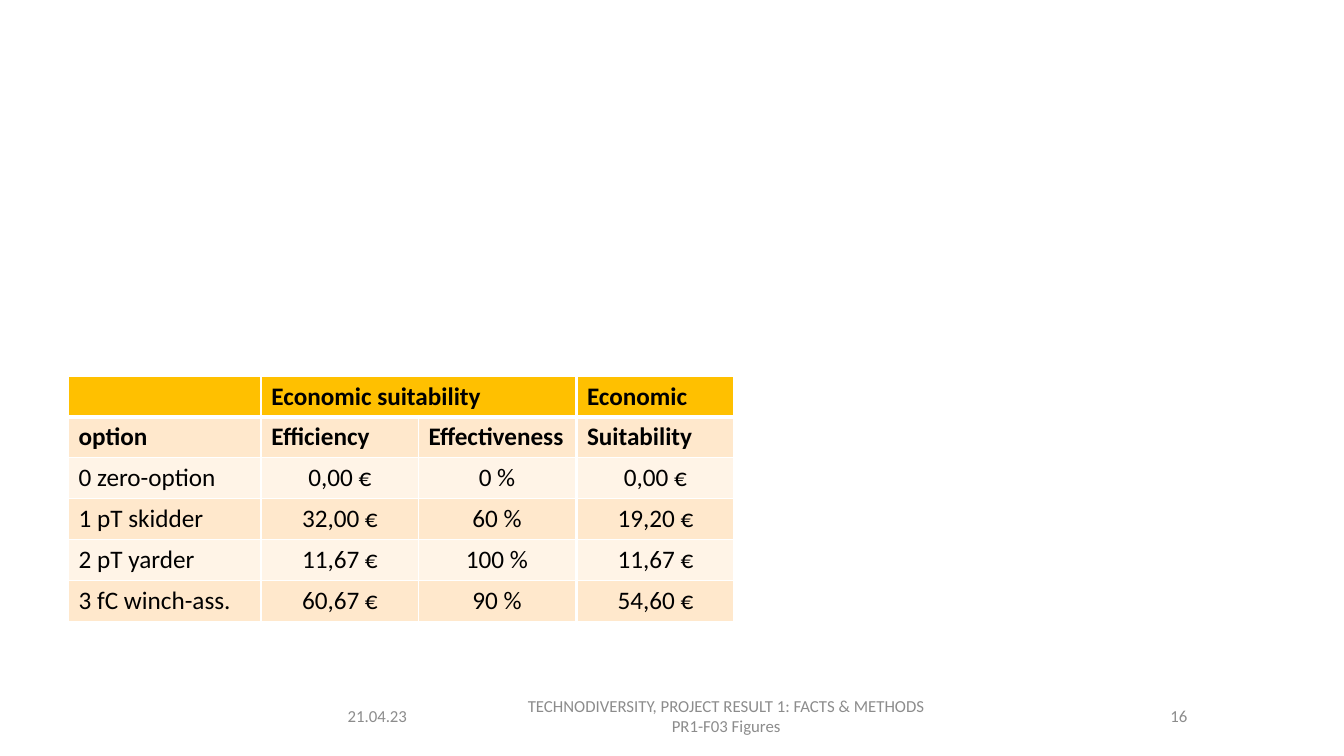
from lxml import etree
from pptx import Presentation
from pptx.dml.color import RGBColor
from pptx.enum.text import MSO_ANCHOR, PP_ALIGN
from pptx.oxml.ns import qn
from pptx.util import Pt

LEFT, CENTER, RIGHT = PP_ALIGN.LEFT, PP_ALIGN.CENTER, PP_ALIGN.RIGHT
MIDDLE = MSO_ANCHOR.MIDDLE
HEADER, DARK_BAND, LIGHT_BAND = "FFC000", "FFE8CC", "FFF4E7"
TABLE_TOP, ROW_HEIGHT = 268.56, 29.2
FOOTER_TOP, FOOTER_HEIGHT = 496.8, 28.8


def write(frame, text, size=18, color="000000", bold=False, align=LEFT):
    for index, line in enumerate(text.split("\n")):
        para = frame.add_paragraph() if index else frame.paragraphs[0]
        para.alignment = align
        span = para.add_run()
        span.text = line
        span.font.name = "Calibri"
        span.font.size = Pt(size)
        span.font.bold = bold
        span.font.color.rgb = RGBColor.from_string(color)


def style_cell(cell, color, bottom_width):
    properties = cell._tc.get_or_add_tcPr()
    for side, width in (("lnL", 1), ("lnR", 1), ("lnT", 1), ("lnB", bottom_width)):
        border = etree.SubElement(properties, qn("a:" + side), w=str(Pt(width)))
        fill = etree.SubElement(border, qn("a:solidFill"))
        etree.SubElement(fill, qn("a:srgbClr"), val="FFFFFF")
    cell.fill.solid()
    cell.fill.fore_color.rgb = RGBColor.from_string(color)


deck = Presentation()
deck.slide_width, deck.slide_height = Pt(960), Pt(540)
page = deck.slides.add_slide(deck.slide_layouts[6])

footers = [
    (241.2, 96.5, "21.04.23", LEFT),
    (349.9, 337.7, "TECHNODIVERSITY, PROJECT RESULT 1: FACTS & METHODS\nPR1-F03 Figures", CENTER),
    (703.4, 151.9, "16", RIGHT),
]
for left, width, text, align in footers:
    box = page.shapes.add_textbox(Pt(left), Pt(FOOTER_TOP), Pt(width), Pt(FOOTER_HEIGHT))
    box.text_frame.word_wrap = True
    box.text_frame.vertical_anchor = MIDDLE
    write(box.text_frame, text, size=12, color="8C8C8C", align=align)

suitability_rows = [
    ["Economic suitability", ""],
    ["Efficiency", "Effectiveness"],
    ["0,00 €", "0 %"],
    ["32,00 €", "60 %"],
    ["11,67 €", "100 %"],
    ["60,67 €", "90 %"],
]
result_rows = [["Economic"], ["Suitability"], ["0,00 €"], ["19,20 €"], ["11,67 €"], ["54,60 €"]]
option_rows = [[""], ["option"], ["0 zero-option"], ["1 pT skidder"], ["2 pT yarder"], ["3 fC winch-ass."]]

tables = [
    (186.7, 112.2, suitability_rows, CENTER),
    (412.1, 112.2, result_rows, CENTER),
    (49, 136.8, option_rows, LEFT),
]
for left, column_width, rows, value_align in tables:
    row_count, column_count = len(rows), len(rows[0])
    table = page.shapes.add_table(
        row_count, column_count, Pt(left), Pt(TABLE_TOP),
        Pt(column_width * column_count), Pt(ROW_HEIGHT * row_count),
    ).table
    for row_index, row in enumerate(rows):
        table.rows[row_index].height = Pt(ROW_HEIGHT)
        band = DARK_BAND if row_index % 2 else LIGHT_BAND
        for column_index, text in enumerate(row):
            cell = table.cell(row_index, column_index)
            style_cell(cell, band if row_index else HEADER, 1 if row_index else 3)
            if text:
                heading = row_index < 2
                write(cell.text_frame, text, bold=heading, align=LEFT if heading else value_align)
    if column_count > 1:
        table.cell(0, 0).merge(table.cell(0, column_count - 1))

deck.save("out.pptx")
